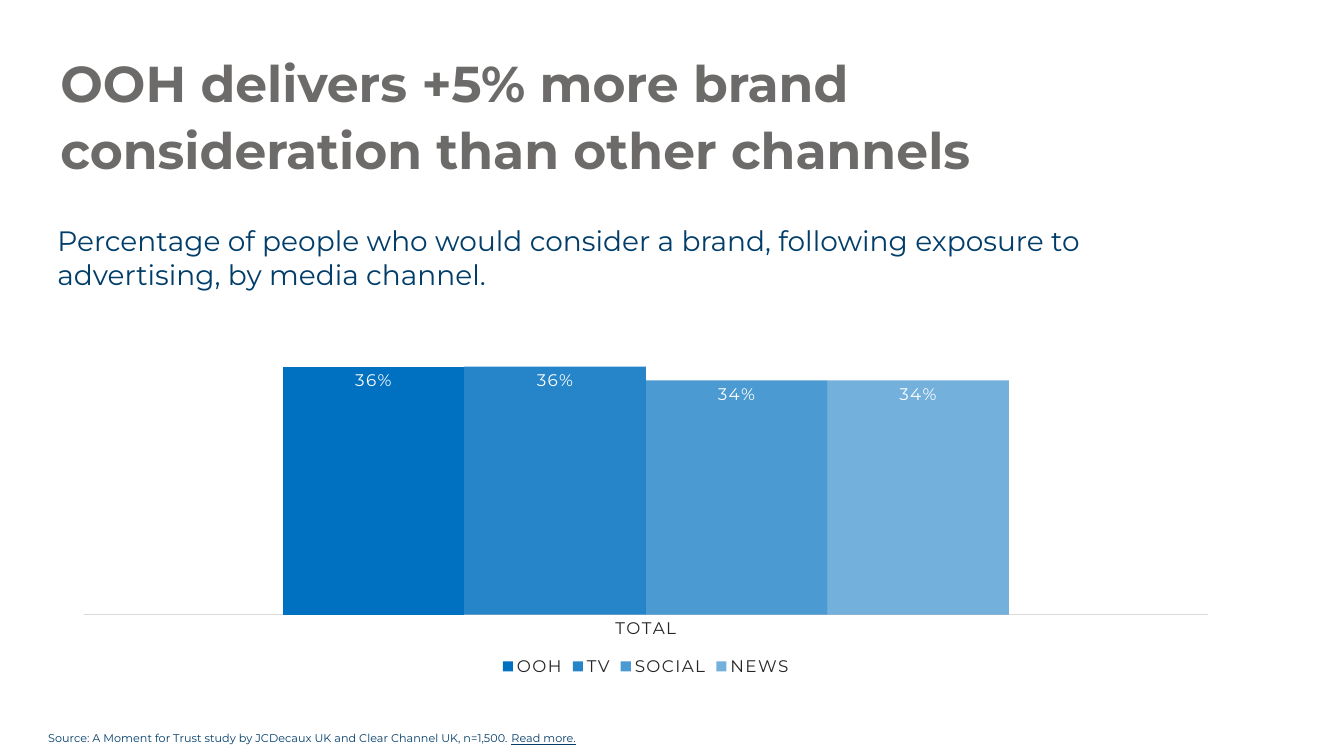
from dataclasses import dataclass

from lxml.etree import SubElement as Sub
from pptx import Presentation
from pptx.chart.chart import Chart
from pptx.chart.data import CategoryChartData as Data
from pptx.dml.color import RGBColor as Rgb
from pptx.enum.chart import XL_CHART_TYPE as Kind
from pptx.enum.chart import XL_LABEL_POSITION as Spot
from pptx.enum.chart import XL_LEGEND_POSITION as Side
from pptx.enum.chart import XL_TICK_LABEL_POSITION as Tag
from pptx.enum.chart import XL_TICK_MARK as Tick
from pptx.oxml import parse_xml
from pptx.oxml.ns import nsdecls, qn
from pptx.slide import Slide
from pptx.text.text import Font
from pptx.util import Inches, Pt


@dataclass(frozen=True)
class Theme:
    face: str = "Montserrat"
    grey: str = "6C6B6A"
    navy: str = "003D69"
    link: str = "063C68"
    ink: str = "262626"
    white: str = "FFFFFF"
    rule: str = "D9D9D9"
    bar: str = "0070C0"
    head: int = 36
    lead: int = 20
    mark: int = 12
    note: int = 8
    track: int = 100


@dataclass(frozen=True)
class Box:
    left: float
    top: float
    width: float
    height: float

    def place(self) -> list[int]:
        return [Inches(n) for n in (self.left, self.top, self.width, self.height)]


@dataclass(frozen=True)
class Media:
    name: str
    share: float
    alpha: int


THEME = Theme()
MEDIA = [
    Media("OOH", 0.36, 100),
    Media("TV", 0.36, 85),
    Media("SOCIAL", 0.34, 70),
    Media("NEWS", 0.34, 55),
]


def style(font: Font, size: int, color: str, bold: bool = False, under: bool = False) -> None:
    font.name = THEME.face
    font.size = Pt(size)
    font.bold = bold
    font.underline = under
    font.color.rgb = Rgb.from_string(color)


def write(slide: Slide, box: Box, text: str, *, size: int, color: str, bold: bool = False,
          inset: bool = True, lines: float = 1.0, link: str = "") -> None:
    frame = slide.shapes.add_textbox(*box.place()).text_frame
    frame.word_wrap = True
    if not inset:
        frame.margin_left = frame.margin_right = 0
        frame.margin_top = frame.margin_bottom = 0
    para = frame.paragraphs[0]
    para.line_spacing = lines
    run = para.add_run()
    run.text = text
    style(run.font, size, color, bold)
    if link:
        tail = para.add_run()
        tail.text = link
        style(tail.font, size, THEME.link, under=True)


def paint(chart: Chart) -> None:
    for item, series in zip(MEDIA, chart.plots[0].series):
        fill = series.format.fill
        fill.solid()
        fill.fore_color.rgb = Rgb.from_string(THEME.bar)
        if item.alpha < 100:
            tone = series.format.element if hasattr(series.format, "element") else series._element
            clr = next(tone.iter(qn("a:srgbClr")))
            Sub(clr, qn("a:alpha")).set("val", str(item.alpha * 1000))
        labels = series.data_labels
        labels.show_value = True
        labels.number_format = "0%"
        labels.number_format_is_linked = False
        labels.position = Spot.INSIDE_END
        style(labels.font, THEME.mark, THEME.white)


def frame_plot(chart: Chart) -> None:
    area = chart._chartSpace.chart.plotArea
    for old in area.findall(qn("c:layout")):
        area.remove(old)
    sizes = {"x": 0.02, "y": 0.01, "w": 0.96, "h": 0.8}
    parts = "".join(f'<c:{key} val="{val}"/>' for key, val in sizes.items())
    area.insert(0, parse_xml(
        f'<c:layout {nsdecls("c")}><c:manualLayout><c:layoutTarget val="inner"/>'
        f'<c:xMode val="edge"/><c:yMode val="edge"/>{parts}</c:manualLayout></c:layout>'))


def plot(slide: Slide, box: Box) -> None:
    data = Data(number_format="0%")
    data.categories = ["TOTAL"]
    for item in MEDIA:
        data.add_series(item.name, [item.share])
    chart = slide.shapes.add_chart(Kind.COLUMN_CLUSTERED, *box.place(), data).chart
    chart.has_title = False
    style(chart.font, THEME.mark, THEME.ink)
    bars = chart.plots[0]
    bars.gap_width, bars.overlap, bars.vary_by_categories = 219, 0, False
    paint(chart)

    value = chart.value_axis
    value.minimum_scale, value.maximum_scale = 0, 0.4
    value.has_major_gridlines = False
    value.visible = False
    base = chart.category_axis
    base.major_tick_mark = base.minor_tick_mark = Tick.NONE
    base.tick_label_position = Tag.NEXT_TO_AXIS
    base.format.line.color.rgb = Rgb.from_string(THEME.rule)
    base.format.line.width = Pt(0.75)
    style(base.tick_labels.font, THEME.mark, THEME.ink)

    chart.has_legend = True
    chart.legend.position = Side.BOTTOM
    chart.legend.include_in_layout = False
    style(chart.legend.font, THEME.mark, THEME.ink)
    for props in chart._chartSpace.iter(qn("a:defRPr")):
        props.set("spc", str(THEME.track))
    frame_plot(chart)


def main() -> None:
    """Build the brand consideration slide."""
    deck = Presentation()
    deck.slide_width, deck.slide_height = Inches(13.33), Inches(7.5)
    slide = deck.slides.add_slide(deck.slide_layouts[6])
    write(slide, Box(0.6, 0.46, 9.23, 1.34),
          "OOH delivers +5% more brand consideration than other channels",
          size=THEME.head, color=THEME.grey, bold=True, inset=False, lines=1.1)
    write(slide, Box(0.38, 7.21, 12.72, 0.24),
          "Source: A Moment for Trust study by JCDecaux UK and Clear Channel UK, n=1,500. ",
          size=THEME.note, color=THEME.navy, link="Read more.")
    write(slide, Box(0.47, 2.17, 10.88, 0.77),
          "Percentage of people who would consider a brand, following exposure to "
          "advertising, by media channel.",
          size=THEME.lead, color=THEME.navy)
    plot(slide, Box(0.6, 3.33, 11.61, 3.42))
    deck.save("out.pptx")


if __name__ == "__main__":
    main()
